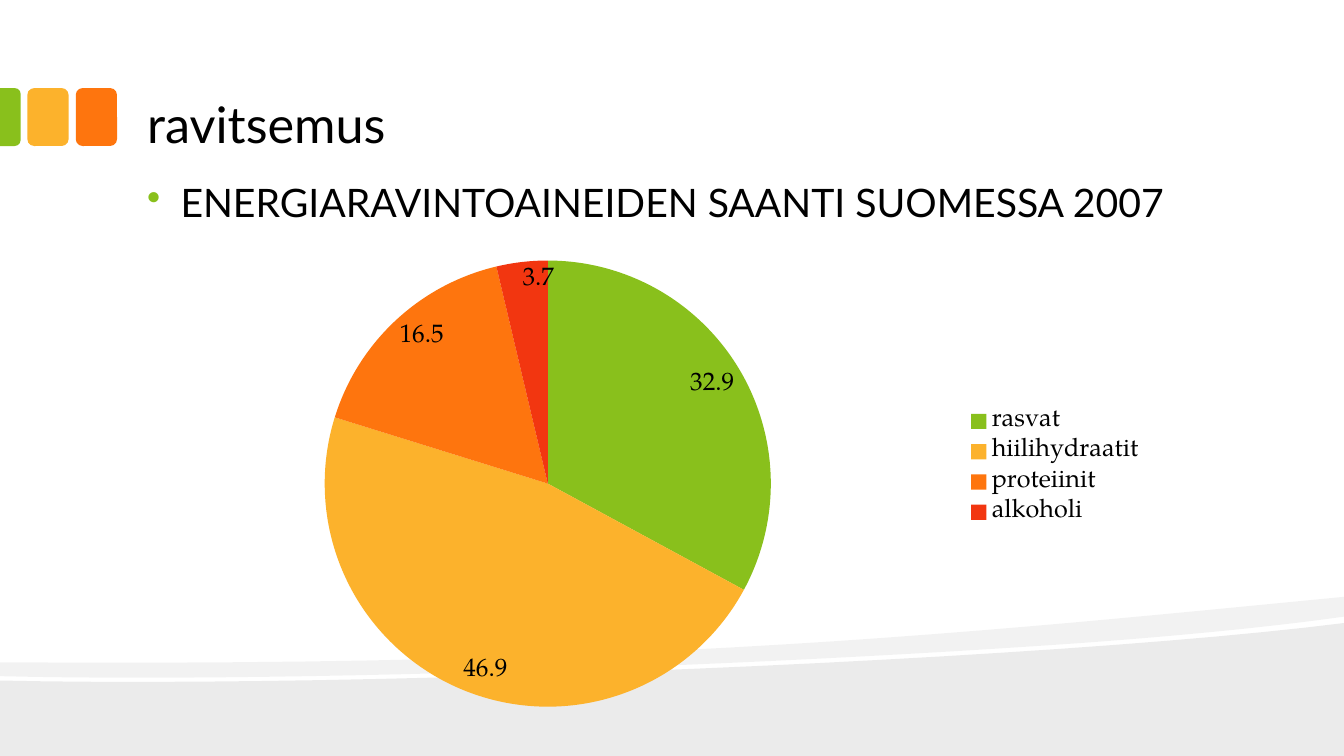
"""Build a slide on nutrition with a pie chart of energy sources."""
from lxml.etree import SubElement
from pptx import Presentation
from pptx.chart.data import CategoryChartData
from pptx.dml.color import RGBColor
from pptx.enum.chart import XL_CHART_TYPE, XL_LABEL_POSITION, XL_LEGEND_POSITION
from pptx.enum.shapes import MSO_SHAPE
from pptx.enum.text import MSO_ANCHOR
from pptx.oxml import parse_xml
from pptx.oxml.ns import nsdecls, qn
from pptx.util import Cm, Pt

GREEN, YELLOW, ORANGE, RED = "89C01C", "FCB22C", "FE750E", "F23610"
WIDE, HIGH = 33.87, 19.05


def tint(fill, color, alpha=100):
    fill.solid()
    fill.fore_color.rgb = RGBColor.from_string(color)
    if alpha < 100:
        for node in fill._xPr.iter(qn("a:srgbClr")):
            SubElement(node, qn("a:alpha"), val=str(alpha * 1000))


def write(text, top, height, size, anchor=MSO_ANCHOR.TOP, spacing=None, bullet=None):
    box = slide.shapes.add_textbox(Cm(3.38), Cm(top), Cm(27.08), Cm(height))
    frame = box.text_frame
    frame.word_wrap = True
    frame.vertical_anchor = anchor
    frame.margin_left = frame.margin_right = Cm(0.33)
    frame.margin_top = frame.margin_bottom = Cm(0.18)
    par = frame.paragraphs[0]
    if bullet:
        props = par._p.get_or_add_pPr()
        props.set("marL", str(Cm(0.84)))
        props.set("indent", str(-Cm(0.84)))
        color = SubElement(props, qn("a:buClr"))
        SubElement(color, qn("a:srgbClr"), val=bullet)
        SubElement(props, qn("a:buChar"), char="•")
    if spacing:
        par.line_spacing = spacing
    run = par.add_run()
    run.text = text
    run.font.name = "Lato"
    run.font.size = Pt(size)
    tint(run.font.fill, "000000")


deck = Presentation()
deck.slide_width, deck.slide_height = Cm(WIDE), Cm(HIGH)
slide = deck.slides.add_slide(deck.slide_layouts[6])

waves = [
    (8, [(WIDE, 15.7), (WIDE, HIGH), (0, HIGH), (0, 17.15),
         (8.94, 17.35, 26.47, 16.64, WIDE, 15.7)]),
    (5, [(WIDE, 15.04), (WIDE, 15.54),
         (31.88, 15.82, 29.18, 16.08, 26.14, 16.28),
         (17.73, 16.84, 6.55, 17.2, 0, 17.04), (0, 16.69),
         (16.56, 16.81, 24.66, 15.93, WIDE, 15.04)]),
]
steps = 24
for alpha, parts in waves:
    spots = [parts[0]]
    for part in parts[1:]:
        if len(part) == 2:
            spots.append(part)
            continue
        ends = [spots[-1], part[:2], part[2:4], part[4:]]
        for step in range(1, steps + 1):
            t = step / steps
            share = (1 - t) ** 3, 3 * t * (1 - t) ** 2, 3 * t * t * (1 - t), t ** 3
            spots.append([sum(s * e[axis] for s, e in zip(share, ends)) for axis in (0, 1)])
    spots = [(Cm(x), Cm(y)) for x, y in spots]
    pen = slide.shapes.build_freeform(*spots[0])
    pen.add_line_segments(spots[1:], close=True)
    wave = pen.convert_to_shape()
    wave.shadow.inherit = False
    wave.line.fill.background()
    tint(wave.fill, "000000", alpha)

tiles = [
    (MSO_SHAPE.ROUNDED_RECTANGLE, 1.91, 2.22, 1.04, 1.46, ORANGE),
    (MSO_SHAPE.ROUNDED_RECTANGLE, 0.69, 2.22, 1.04, 1.46, YELLOW),
    (MSO_SHAPE.ROUND_2_SAME_RECTANGLE, -0.47, 2.69, 1.46, 0.52, GREEN),
]
for kind, left, top, width, height, color in tiles:
    tile = slide.shapes.add_shape(kind, Cm(left), Cm(top), Cm(width), Cm(height))
    tile.shadow.inherit = False
    tile.line.fill.background()
    tint(tile.fill, color)
tile.rotation = 90
tile.adjustments[0] = 0.29

write("ravitsemus", 0.43, 3.61, 36, anchor=MSO_ANCHOR.BOTTOM)
write("ENERGIARAVINTOAINEIDEN SAANTI SUOMESSA 2007", 4.45, 12.7, 28,
      spacing=0.9, bullet=GREEN)

data = CategoryChartData()
data.categories = ["rasvat", "hiilihydraatit", "proteiinit", "alkoholi"]
data.add_series("Series 1", [32.9, 46.9, 16.5, 3.7])
chart = slide.shapes.add_chart(
    XL_CHART_TYPE.PIE, Cm(5.92), Cm(5.72), Cm(23.19), Cm(12.09), data).chart
chart.has_title = False
chart.font.name = "TeX Gyre Pagella"
chart.font.size = Pt(18)
tint(chart.font.fill, "000000")
chart.has_legend = True
chart.legend.position = XL_LEGEND_POSITION.RIGHT
chart.legend.include_in_layout = False

plot = chart.plots[0]
plot.has_data_labels = True
plot.data_labels.show_value = True
plot.data_labels.show_percentage = False
plot.data_labels.position = XL_LABEL_POSITION.INSIDE_END
for place, color in enumerate([GREEN, YELLOW, ORANGE, RED]):
    slice = plot.series[0].points[place].format
    tint(slice.fill, color)
    slice.line.fill.background()

area = chart._chartSpace.chart.plotArea
for old in area.findall(qn("c:layout")):
    area.remove(old)
area.insert(0, parse_xml(
    f'<c:layout {nsdecls("c")}><c:manualLayout><c:layoutTarget val="inner"/>'
    '<c:xMode val="edge"/><c:yMode val="edge"/><c:x val="0.03"/><c:y val="0.07"/>'
    '<c:w val="0.62"/><c:h val="0.93"/></c:manualLayout></c:layout>'))

deck.save("out.pptx")
